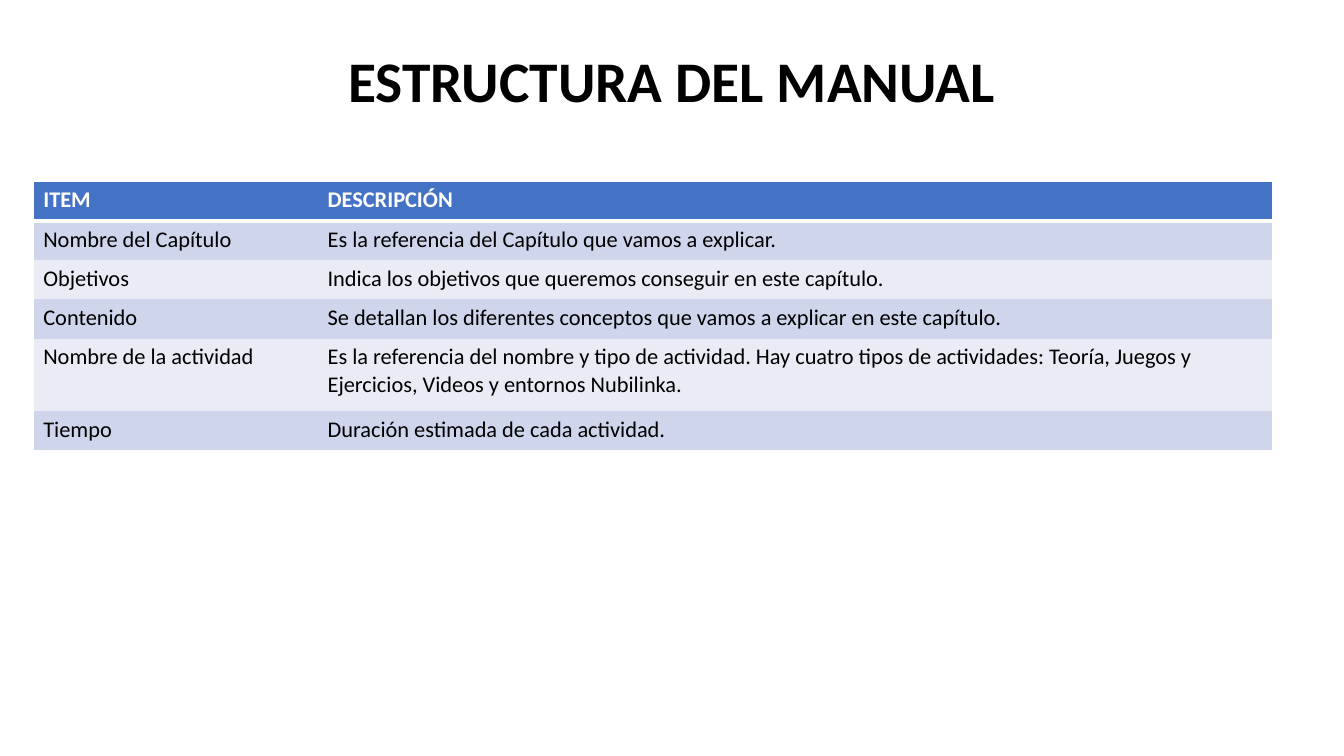
from lxml import etree
from pptx import Presentation
from pptx.dml.color import RGBColor
from pptx.enum.text import MSO_ANCHOR, PP_ALIGN
from pptx.oxml.ns import qn
from pptx.util import Inches, Pt

CENTER, LEFT = PP_ALIGN.CENTER, PP_ALIGN.LEFT
TOP = MSO_ANCHOR.TOP

# Content
TITLE = "ESTRUCTURA DEL MANUAL"
HEADINGS = ("ITEM", "DESCRIPCIÓN")
ITEMS = [
    ("Nombre del Capítulo", "Es la referencia del Capítulo que vamos a explicar."),
    ("Objetivos", "Indica los objetivos que queremos conseguir en este capítulo."),
    ("Contenido", "Se detallan los diferentes conceptos que vamos a explicar en este capítulo."),
    ("Nombre de la actividad",
     "Es la referencia del nombre y tipo de actividad. Hay cuatro tipos de actividades: "
     "Teoría, Juegos y Ejercicios, Videos y entornos Nubilinka."),
    ("Tiempo", "Duración estimada de cada actividad."),
]

# Layout, in inches
SLIDE_SIZE = (13.33, 7.5)
TITLE_BOX = (0, 0.48, 13.33, 1.31)
TABLE_ORIGIN = (0.33, 1.8)
COLUMN_WIDTHS = (2.82, 9.47)
ROW_HEIGHTS = (0.39, 0.39, 0.39, 0.39, 0.72, 0.39)

THEME = {
    "font": "Calibri", "title_size": 41, "table_size": 16,
    "text": "000000", "heading": "FFFFFF", "border": "FFFFFF",
    "header_fill": "4472C4", "bands": ("CFD5EA", "E9EBF5"),
    "thin": 1, "thick": 3,
    "plain_table": "{2D5ABB26-0587-4C30-8999-92F81FD0307C}",
}


def format_text(frame, size, color, bold, align):
    paragraph = frame.paragraphs[0]
    paragraph.alignment = align
    font = paragraph.runs[0].font
    font.name, font.size, font.bold = THEME["font"], Pt(size), bold
    font.color.rgb = RGBColor.from_string(color)


def add_border(cell, side, width):
    line = etree.SubElement(cell._tc.get_or_add_tcPr(), qn(f"a:ln{side}"), w=str(Pt(width)))
    solid = etree.SubElement(line, qn("a:solidFill"))
    etree.SubElement(solid, qn("a:srgbClr"), val=THEME["border"])


def add_title(slide):
    frame = slide.shapes.add_textbox(*map(Inches, TITLE_BOX)).text_frame
    frame.word_wrap = True
    frame.vertical_anchor = TOP
    frame.text = TITLE
    frame.paragraphs[0].line_spacing = 0.9
    format_text(frame, THEME["title_size"], THEME["text"], True, CENTER)


def add_items_table(slide):
    rows = [HEADINGS, *ITEMS]
    size = (sum(COLUMN_WIDTHS), sum(ROW_HEIGHTS))
    table = slide.shapes.add_table(
        len(rows), len(HEADINGS), *map(Inches, TABLE_ORIGIN + size)).table
    table._tbl.tblPr.find(qn("a:tableStyleId")).text = THEME["plain_table"]
    for column, width in zip(table.columns, COLUMN_WIDTHS):
        column.width = Inches(width)
    for row, height in zip(table.rows, ROW_HEIGHTS):
        row.height = Inches(height)

    last_row, last_column = len(rows) - 1, len(HEADINGS) - 1
    for r, texts in enumerate(rows):
        is_header = r == 0
        fill = THEME["header_fill"] if is_header else THEME["bands"][(r - 1) % 2]
        color = THEME["heading"] if is_header else THEME["text"]
        for c, text in enumerate(texts):
            cell = table.cell(r, c)
            cell.text = text
            format_text(cell.text_frame, THEME["table_size"], color, is_header, LEFT)
            # Outer frame, plus a thick rule under the header
            borders = (
                ("L", c == 0, THEME["thin"]),
                ("R", c == last_column, THEME["thin"]),
                ("T", is_header, THEME["thin"]),
                ("B", is_header or r == last_row,
                 THEME["thick"] if is_header else THEME["thin"]),
            )
            for side, shown, width in borders:
                if shown:
                    add_border(cell, side, width)
            cell.fill.solid()
            cell.fill.fore_color.rgb = RGBColor.from_string(fill)


def main():
    deck = Presentation()
    deck.slide_width, deck.slide_height = map(Inches, SLIDE_SIZE)
    slide = deck.slides.add_slide(deck.slide_layouts[6])
    add_title(slide)
    add_items_table(slide)
    deck.save("out.pptx")


if __name__ == "__main__":
    main()
